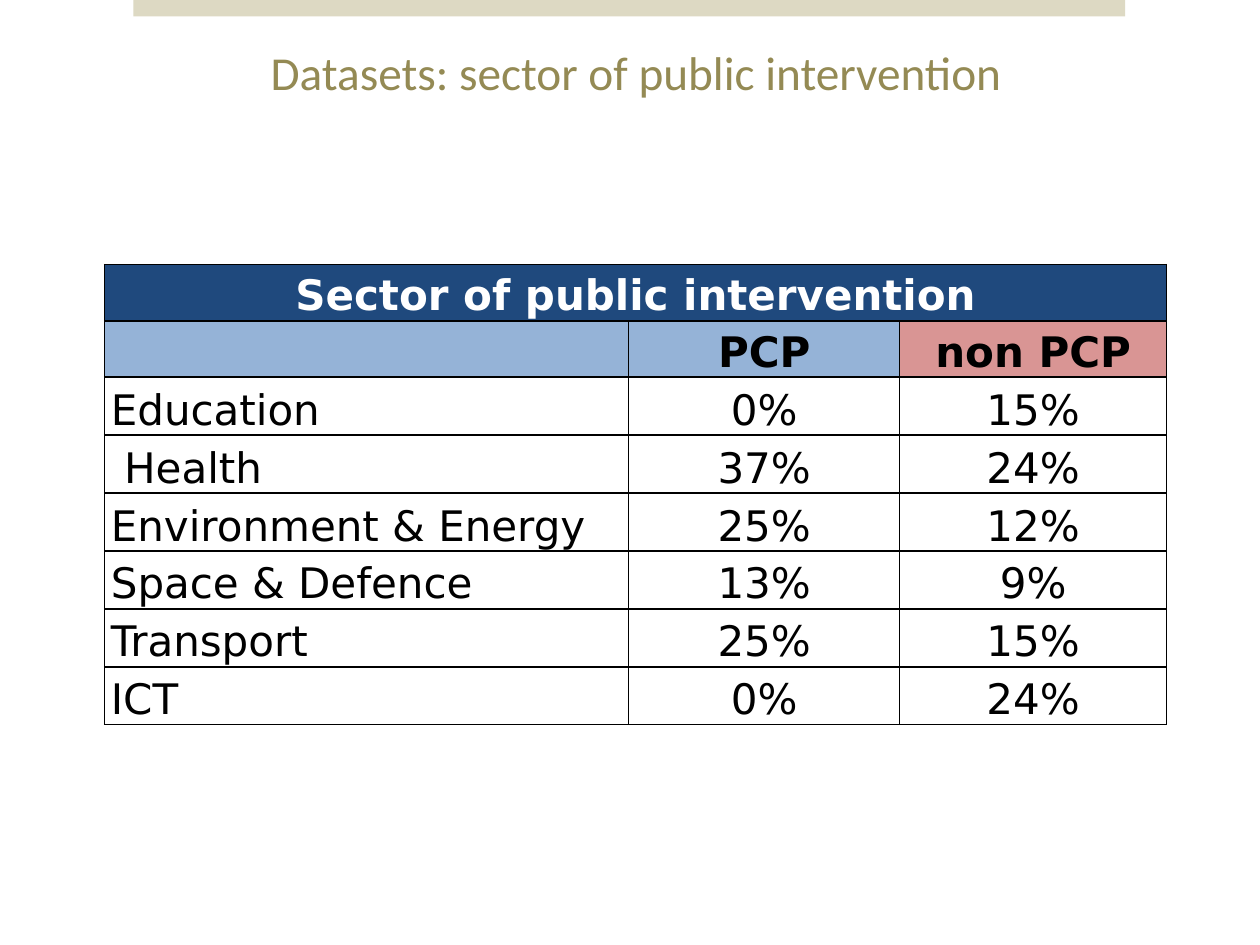
import pptx
import pptx.util
import pptx.dml.color
import pptx.enum.shapes
import pptx.enum.text
import lxml.etree
from pptx.oxml.ns import qn

Inches, Pt = pptx.util.Inches, pptx.util.Pt
ALIGN = pptx.enum.text.PP_ALIGN
ANCHOR = pptx.enum.text.MSO_ANCHOR

# Content
TITLE = " Datasets: sector of public intervention"
ROWS = [
    ("Sector of public intervention", "", ""),
    ("", "PCP", "non PCP"),
    ("Education", "0%", "15%"),
    (" Health", "37%", "24%"),
    ("Environment & Energy", "25%", "12%"),
    ("Space & Defence", "13%", "9%"),
    ("Transport", "25%", "15%"),
    ("ICT", "0%", "24%"),
]
COLORS = {"band": "DDD9C3", "title": "948A54", "header": "1F497D", "pcp": "95B3D7",
          "non_pcp": "D99594", "white": "FFFFFF", "black": "000000"}
HEADER_FILLS = [("header",) * 3, ("pcp", "pcp", "non_pcp")]
COLUMN_WIDTHS = [4.16, 2.15, 2.12]
HEADER_HEIGHT, BODY_HEIGHT = 0.44, 0.46


def rgb(name):
    return pptx.dml.color.RGBColor.from_string(COLORS[name])


def add_text(paragraph, text, font_name, size, color, bold=False):
    run = paragraph.add_run()
    run.text = text
    run.font.name, run.font.size, run.font.bold = font_name, Pt(size), bold
    run.font.color.rgb = rgb(color)


def add_borders(cell):
    properties = cell._tc.get_or_add_tcPr()
    for side in ("a:lnL", "a:lnR", "a:lnT", "a:lnB"):
        line = lxml.etree.SubElement(properties, qn(side), w=str(Pt(1)))
        fill = lxml.etree.SubElement(line, qn("a:solidFill"))
        lxml.etree.SubElement(fill, qn("a:srgbClr"), val=COLORS["black"])


def format_cell(cell, text, row, column):
    is_header = row < len(HEADER_FILLS)
    cell.margin_left = cell.margin_right = Inches(0.05)
    cell.margin_top = cell.margin_bottom = 0
    cell.vertical_anchor = ANCHOR.BOTTOM
    add_borders(cell)
    if is_header:
        cell.fill.solid()
        cell.fill.fore_color.rgb = rgb(HEADER_FILLS[row][column])
    else:
        cell.fill.background()
    paragraph = cell.text_frame.paragraphs[0]
    paragraph.alignment = ALIGN.CENTER if is_header or column else ALIGN.LEFT
    paragraph.line_spacing = 1.15
    if text:
        add_text(paragraph, text, "DejaVu Sans", 24, "black" if row else "white", is_header)


presentation = pptx.Presentation()
presentation.slide_width, presentation.slide_height = Inches(10), Inches(7.5)
slide = presentation.slides.add_slide(presentation.slide_layouts[6])

# Band along the top edge
band = slide.shapes.add_shape(pptx.enum.shapes.MSO_SHAPE.RECTANGLE,
                              Inches(1.06), 0, Inches(7.87), Inches(0.13))
band.shadow.inherit = False
band.fill.solid()
band.fill.fore_color.rgb = rgb("band")
band.line.fill.background()

# Sector table
heights = [HEADER_HEIGHT if row < len(HEADER_FILLS) else BODY_HEIGHT for row in range(len(ROWS))]
table = slide.shapes.add_table(len(ROWS), len(COLUMN_WIDTHS), Inches(0.83), Inches(2.1),
                               Inches(sum(COLUMN_WIDTHS)), Inches(sum(heights))).table
table.first_row = table.horz_banding = False
for column, width in enumerate(COLUMN_WIDTHS):
    table.columns[column].width = Inches(width)
for row, (texts, height) in enumerate(zip(ROWS, heights)):
    table.rows[row].height = Inches(height)
    for column, text in enumerate(texts):
        format_cell(table.cell(row, column), text, row, column)
table.cell(0, 0).merge(table.cell(0, len(COLUMN_WIDTHS) - 1))

# Title
title = slide.shapes.add_textbox(Inches(0.28), Inches(0.22), Inches(9.45), Inches(0.69))
title.text_frame.word_wrap = True
title.text_frame.vertical_anchor = ANCHOR.MIDDLE
title_paragraph = title.text_frame.paragraphs[0]
title_paragraph.alignment = ALIGN.CENTER
add_text(title_paragraph, TITLE, "Calibri", 27, "title")

presentation.save("out.pptx")
